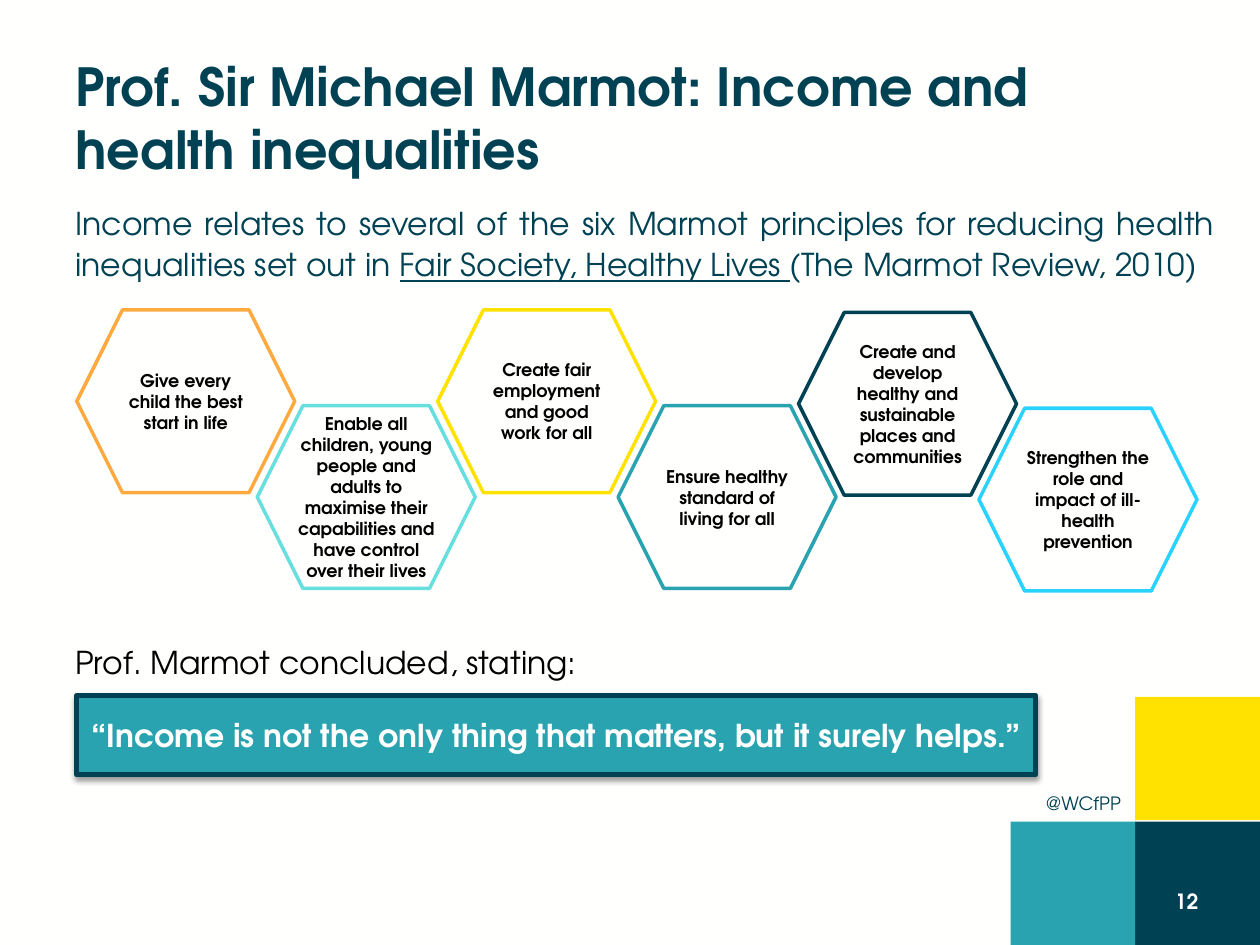
"""Build the slide on income and the Marmot principles for health inequalities."""
import dataclasses

import lxml.etree
import pptx
import pptx.dml.color
import pptx.enum.shapes
import pptx.enum.text
import pptx.oxml.ns
import pptx.util

Inches = pptx.util.Inches
Pt = pptx.util.Pt
Color = pptx.dml.color.RGBColor.from_string
Shape = pptx.enum.shapes.MSO_SHAPE
Align = pptx.enum.text.PP_ALIGN
Anchor = pptx.enum.text.MSO_ANCHOR


@dataclasses.dataclass(frozen=True)
class Theme:
    font: str = "TeX Gyre Adventor"
    navy: str = "004253"
    teal: str = "29A3AF"
    yellow: str = "FFE200"
    orange: str = "FFAA41"
    aqua: str = "68DFDF"
    sky: str = "2AD3FF"
    paper: str = "FFFFFE"
    white: str = "FFFFFF"
    black: str = "000000"
    title: float = 30
    body: float = 18
    number: float = 12
    handle: float = 10.5
    label: float = 10


theme = Theme()
deck = pptx.Presentation()
deck.slide_width, deck.slide_height = Inches(10), Inches(7.5)
page = deck.slides.add_slide(deck.slide_layouts[6])
page.background.fill.solid()
page.background.fill.fore_color.rgb = Color(theme.paper)


def add_block(kind, left, top, width, height, fill, line=None, weight=0):
    block = page.shapes.add_shape(kind, Inches(left), Inches(top), Inches(width), Inches(height))
    block.shadow.inherit = False
    block.fill.solid()
    block.fill.fore_color.rgb = Color(fill)
    if line:
        block.line.color.rgb = Color(line)
        block.line.width = Pt(weight)
    else:
        block.line.fill.background()
    return block


def write(box, texts, size, color, bold=False, align=Align.LEFT, anchor=Anchor.MIDDLE):
    frame = box.text_frame
    frame.word_wrap = True
    frame.vertical_anchor = anchor
    para = frame.paragraphs[0]
    para.alignment = align
    for text in texts:
        span = para.add_run()
        span.text = text
        span.font.name = theme.font
        span.font.size = Pt(size)
        span.font.bold = bold
        span.font.color.rgb = Color(color)
    return para


for left, top, fill in [(9.01, 6.52, theme.navy), (9.01, 5.53, theme.yellow), (8.02, 6.52, theme.teal)]:
    add_block(Shape.RECTANGLE, left, top, 0.99, 0.98, fill)

handle = page.shapes.add_textbox(Inches(8.2), Inches(6.24), Inches(0.81), Inches(0.29))
write(handle, ["@WCfPP"], theme.handle, theme.navy, anchor=Anchor.TOP)

title = page.shapes.add_textbox(Inches(0.5), Inches(0.3), Inches(9), Inches(1.25))
write(title, ["Prof. Sir Michael Marmot: Income and health inequalities"], theme.title, theme.navy, bold=True)

intro = page.shapes.add_textbox(Inches(0.5), Inches(1.55), Inches(9.24), Inches(0.85))
intro_para = write(intro, [
    "Income relates to several of the six Marmot principles for reducing health inequalities set out in ",
    "Fair Society, Healthy Lives ",
    "(The Marmot Review, 2010)",
], theme.body, theme.navy, align=Align.JUSTIFY, anchor=Anchor.TOP)
intro_para.runs[1].font.underline = True

number = page.shapes.add_textbox(Inches(7.28), Inches(6.95), Inches(2.33), Inches(0.4))
write(number, ["12"], theme.number, theme.white, bold=True, align=Align.RIGHT)

principles = [
    ("Give every child the best start in life", theme.orange, 2.46),
    ("Enable all children, young people and adults to maximise their capabilities "
     "and have control over their lives", theme.aqua, 3.22),
    ("Create fair employment and good work for all", theme.yellow, 2.46),
    ("Ensure healthy standard of living for all", theme.teal, 3.22),
    ("Create and develop healthy and sustainable places and communities", theme.navy, 2.48),
    ("Strengthen the role and impact of ill-health prevention", theme.sky, 3.24),
]
for index, (text, outline, top) in enumerate(principles):
    hexagon = add_block(Shape.HEXAGON, 0.61 + 1.432 * index, top, 1.73, 1.45, theme.paper, outline, 2)
    write(hexagon, [text], theme.label, theme.black, bold=True, align=Align.CENTER)
    if index == 1:
        hexagon.text_frame.margin_left = hexagon.text_frame.margin_right = Inches(0.04)

lead = page.shapes.add_textbox(Inches(0.5), Inches(5.03), Inches(5), Inches(0.4))
lead_para = write(lead, ["Prof. Marmot concluded, stating:"], theme.body, theme.black,
                  align=Align.JUSTIFY, anchor=Anchor.TOP)
for para in (intro_para, lead_para):
    para.line_spacing = 1.07
    para.space_after = Pt(8)

quote = add_block(Shape.RECTANGLE, 0.61, 5.52, 7.61, 0.63, theme.teal, theme.navy, 3)
write(quote, ["“Income is not the only thing that matters, but it surely helps.”"],
      theme.body, theme.paper, bold=True, align=Align.CENTER)
name = pptx.oxml.ns.qn
effects = quote.element.spPr.find(name("a:effectLst"))
shadow = lxml.etree.SubElement(effects, name("a:outerShdw"), blurRad=str(Pt(3.1)), dist=str(Pt(1.6)),
                               dir="5400000", rotWithShape="0")
shade = lxml.etree.SubElement(shadow, name("a:srgbClr"), val=theme.black)
lxml.etree.SubElement(shade, name("a:alpha"), val="38000")

deck.save("out.pptx")
